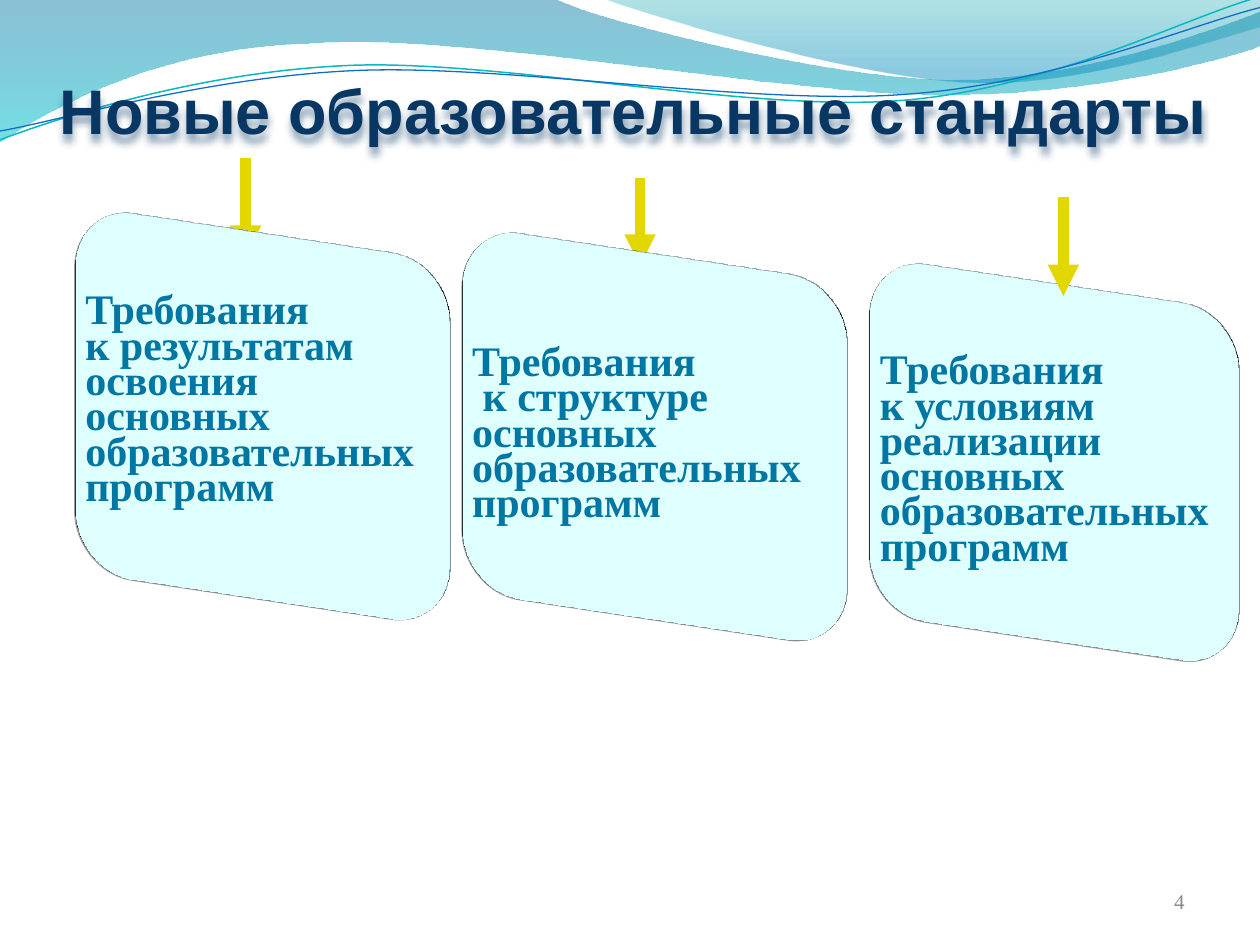
from lxml import etree
from pptx import Presentation
from pptx import util as u
from pptx.dml.color import RGBColor
from pptx.enum import shapes, text
from pptx.oxml import ns

Inches = u.Inches
NAVY = RGBColor(0x08, 0x37, 0x63)
TEAL = RGBColor(0x00, 0x76, 0xA3)
PALE_BLUE = RGBColor(0xC4, 0xEF, 0xFF)
YELLOW = RGBColor(0xE2, 0xD7, 0x00)
GRAY = RGBColor(0x89, 0x89, 0x89)
SERIF = "Times New Roman"
TITLE = "Новые образовательные стандарты"

WAVES = [
    ([[(0, 0)], [(4.4, -0.01)],
      [(4.76, 0.17), (6.64, 0.63), (7.58, 0.63)],
      [(8.53, 0.63), (9.58, 0.26), (10, 0.09)],
      [(10.01, 0.36)],
      [(9.83, 0.44), (8.7, 0.76), (7.46, 0.75)],
      [(6.22, 0.75), (3.82, 0.28), (2.57, 0.34)],
      [(1.29, 0.36), (0.46, 0.83), (-0.01, 1.13)]],
     [(0, RGBColor(0x00, 0x74, 0xA1), 45), (1, RGBColor(0x00, 0xC6, 0xCF), 55)]),
    ([[(4.79, -0.01)],
      [(5.09, 0.11), (6.82, 0.62), (7.69, 0.65)],
      [(8.56, 0.69), (9.61, 0.32), (10, 0.21)],
      [(10, 0)]],
     [(0, RGBColor(0x00, 0xA1, 0xA9), 30), (0.8, RGBColor(0x00, 0x8B, 0xBF), 45)]),
]
STRANDS = [
    ([[(0, 1.11)],
      [(0.48, 0.93), (1.58, 0.57), (2.77, 0.52)],
      [(3.95, 0.47), (5.93, 0.89), (7.13, 0.8)],
      [(8.33, 0.71), (9.38, 0.15), (9.98, -0.02)]],
     RGBColor(0x0A, 0xB8, 0xBF), 0.85),
    ([[(0, 1.04)],
      [(0.47, 0.96), (1.64, 0.61), (2.83, 0.56)],
      [(4.03, 0.51), (5.97, 0.84), (7.17, 0.75)],
      [(8.36, 0.67), (9.41, 0.21), (10, 0.06)]],
     RGBColor(0x0F, 0x6F, 0xC6), 0.75),
]
ENDING = ["основных", "образовательных", "программ"]
CARDS = [
    ((3.5, 1.94, 3.39, 3.05), ["Требования", " к структуре"] + ENDING, 0.05),
    ((0.43, 1.78, 3.31, 3.05),
     ["Требования", "к результатам", "освоения"] + ENDING, 0.27),
    ((6.74, 2.18, 3.26, 2.98),
     ["Требования", "к условиям", "реализации"] + ENDING, 0.05),
]
BACK_ARROWS = [(5.08, 1.41, 2.11), (1.95, 1.25, 2.04)]
FRONT_ARROWS = [(8.44, 1.56, 2.35)]


def add_xml(parent, tag, **attributes):
    return etree.SubElement(parent, ns.qn(tag), attributes)


def write(shape, lines, size, color, font=SERIF, bold=False, align=text.PP_ALIGN.LEFT,
          spacing=1.0, wrap=True, bottom=0.05):
    frame = shape.text_frame
    frame.word_wrap = wrap
    frame.auto_size = text.MSO_AUTO_SIZE.NONE
    frame.vertical_anchor = text.MSO_ANCHOR.MIDDLE
    frame.margin_left = frame.margin_right = Inches(0.1)
    frame.margin_top, frame.margin_bottom = Inches(0.05), Inches(bottom)
    for index, line in enumerate(lines):
        paragraph = frame.add_paragraph() if index else frame.paragraphs[0]
        paragraph.alignment = align
        paragraph.line_spacing = spacing
        run = paragraph.add_run()
        run.text = line
        run.font.size, run.font.name, run.font.bold = u.Pt(size), font, bold
        run.font.color.rgb = color


def add_curve(slide, segments, close):
    corners = [(Inches(x), Inches(y)) for segment in segments for x, y in segment]
    builder = slide.shapes.build_freeform(*corners[0])
    builder.add_line_segments(corners[1:], close=close)
    shape = builder.convert_to_shape()
    shape.shadow.inherit = False
    moves = iter(list(shape._element.spPr.iter(ns.qn("a:lnTo"))))
    for segment in segments[1:]:
        steps = [next(moves) for _ in segment]
        if len(steps) == 3:
            bezier = etree.Element(ns.qn("a:cubicBezTo"))
            steps[0].addprevious(bezier)
            for step in steps:
                bezier.append(step[0])
                step.getparent().remove(step)
    return shape


def add_wave(slide, segments, stops):
    shape = add_curve(slide, segments, close=True)
    shape.line.fill.background()
    shape.fill.gradient()
    shape.fill.gradient_angle = 270
    for stop, (position, color, _) in zip(shape.fill.gradient_stops, stops):
        stop.position = position
        stop.color.rgb = color
    for node, (_, _, opacity) in zip(shape._element.spPr.iter(ns.qn("a:srgbClr")), stops):
        add_xml(node, "a:alpha", val=str(opacity * 1000))


def add_strand(slide, segments, color, width):
    shape = add_curve(slide, segments, close=False)
    shape.fill.background()
    shape.line.color.rgb = color
    shape.line.width = u.Pt(width)


def add_shadow(shape, color, opacity, blur, distance, angle):
    shape.shadow.inherit = False
    effects = shape._element.spPr.find(ns.qn("a:effectLst"))
    shadow = add_xml(effects, "a:outerShdw", blurRad=str(u.Pt(blur)),
                     dist=str(u.Pt(distance)), dir=str(angle * 60000), rotWithShape="0")
    add_xml(add_xml(shadow, "a:srgbClr", val=str(color)), "a:alpha", val=str(opacity * 1000))


def add_card(slide, place, lines, bottom):
    shape = slide.shapes.add_shape(shapes.MSO_SHAPE.ROUNDED_RECTANGLE, *map(Inches, place))
    shape.fill.solid()
    shape.fill.fore_color.rgb = PALE_BLUE
    shape.line.fill.background()
    add_shadow(shape, RGBColor(0, 0, 0), 20, 6, 1, 135)
    properties = shape._element.spPr
    scene = add_xml(properties, "a:scene3d")
    add_xml(scene, "a:camera", prst="isometricOffAxis2Left")
    add_xml(scene, "a:lightRig", rig="threePt", dir="t")
    add_xml(properties, "a:sp3d", extrusionH="12700")
    write(shape, lines, 24, TEAL, bold=True, spacing=0.7, wrap=False, bottom=bottom)


def add_arrow(slide, x, top, bottom):
    arrow = slide.shapes.add_connector(shapes.MSO_CONNECTOR.STRAIGHT, Inches(x),
                                       Inches(top), Inches(x), Inches(bottom))
    arrow.line.color.rgb = YELLOW
    arrow.line.width = u.Pt(6)
    add_xml(arrow.line._get_or_add_ln(), "a:tailEnd", type="triangle")
    add_xml(arrow._element.spPr, "a:effectLst")


def add_title(slide):
    title = slide.shapes.title
    title.left, title.top, title.width, title.height = map(Inches, (0.28, 0.36, 9.49, 1.02))
    write(title, [TITLE], 36, NAVY, font="Arial", bold=True,
          align=text.PP_ALIGN.CENTER, wrap=False)
    tree = slide.shapes._spTree
    tree.remove(title._element)
    tree.append(title._element)
    add_xml(title._element.spPr, "a:prstGeom", prst="roundRect")
    title.fill.background()
    add_xml(title._element.spPr, "a:effectLst")
    add_shadow(title, NAVY, 45, 4, 4, 90)


def main():
    presentation = Presentation()
    presentation.slide_width, presentation.slide_height = Inches(10), Inches(7.5)
    slide = presentation.slides.add_slide(presentation.slide_layouts[5])
    for wave in WAVES:
        add_wave(slide, *wave)
    for strand in STRANDS:
        add_strand(slide, *strand)
    add_title(slide)
    for arrow in BACK_ARROWS:
        add_arrow(slide, *arrow)
    for card in CARDS:
        add_card(slide, *card)
    number = slide.shapes.add_textbox(*map(Inches, (7.17, 6.95, 2.33, 0.4)))
    write(number, ["4"], 12, GRAY, align=text.PP_ALIGN.RIGHT)
    for arrow in FRONT_ARROWS:
        add_arrow(slide, *arrow)
    presentation.save("out.pptx")


if __name__ == "__main__":
    main()
